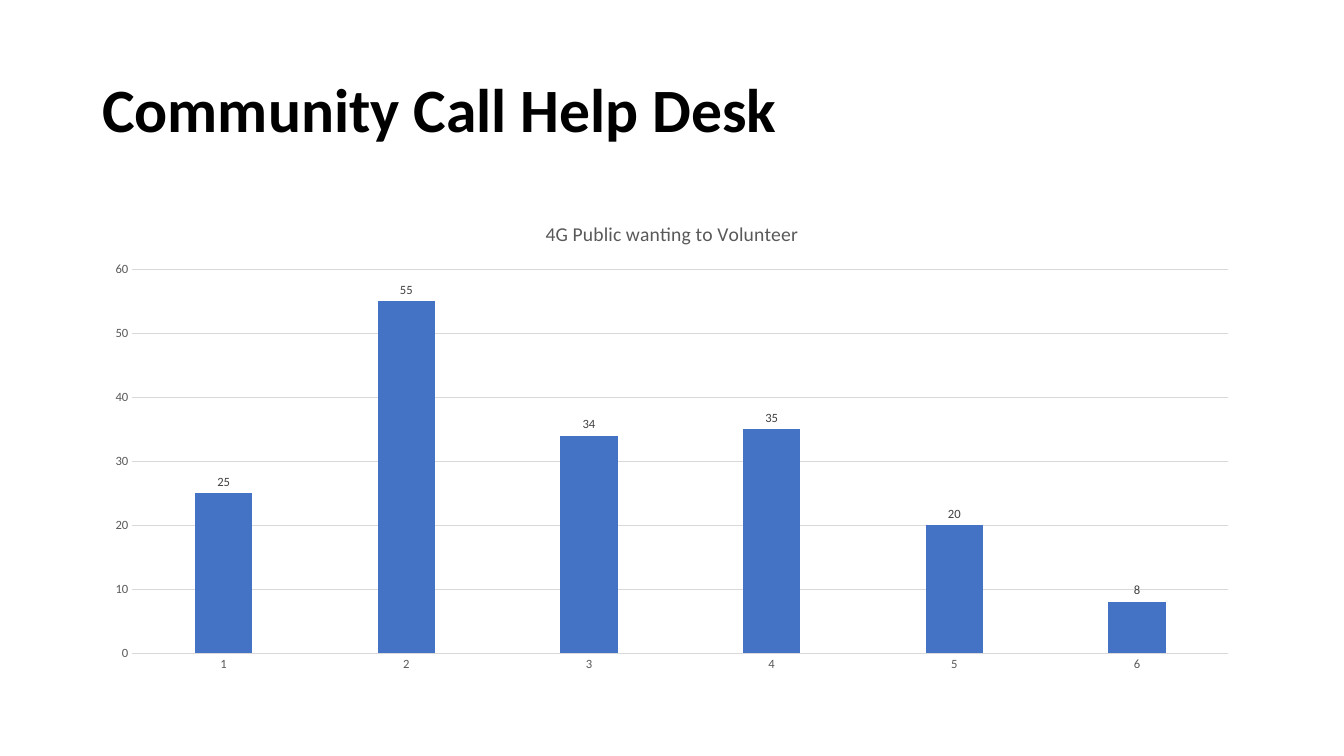
from pptx import Presentation
from pptx.chart.data import CategoryChartData
from pptx.dml.color import RGBColor
from pptx.enum.chart import XL_CHART_TYPE as ChartType, XL_LABEL_POSITION as LabelPosition, XL_TICK_MARK as TickMark
from pptx.enum.text import MSO_ANCHOR as Anchor
from pptx.util import Pt

EMU_PER_PX = 9525
BLACK = RGBColor(0x00, 0x00, 0x00)
DARK_GRAY = RGBColor(0x40, 0x40, 0x40)
GRAY = RGBColor(0x59, 0x59, 0x59)
LIGHT_GRAY = RGBColor(0xD9, 0xD9, 0xD9)
BLUE = RGBColor(0x44, 0x72, 0xC4)


def px(*lengths):
    return [length * EMU_PER_PX for length in lengths]


def set_attributes(target, values):
    for name, value in values.items():
        setattr(target, name, value)


class SlideBuilder:
    font_name = "Calibri"
    line_width = Pt(0.75)

    def __init__(self, slide):
        self.slide = slide

    def style_font(self, font, size, color, bold=False):
        set_attributes(font, {"name": self.font_name, "size": Pt(size), "bold": bold})
        font.color.rgb = color

    def style_line(self, line, color):
        line.width = self.line_width
        line.color.rgb = color

    def add_title(self, text, box):
        frame = self.slide.shapes.add_textbox(*px(*box)).text_frame
        set_attributes(frame, {"word_wrap": True, "vertical_anchor": Anchor.MIDDLE})
        paragraph = frame.paragraphs[0]
        set_attributes(paragraph, {"text": text, "line_spacing": 0.9})
        self.style_font(paragraph.runs[0].font, 44, BLACK, bold=True)

    def style_axis(self, axis):
        set_attributes(axis, {"major_tick_mark": TickMark.NONE, "minor_tick_mark": TickMark.NONE})
        self.style_font(axis.tick_labels.font, 9, GRAY)

    def add_column_chart(self, title, values, box):
        data = CategoryChartData()
        data.categories = [str(number) for number in range(1, len(values) + 1)]
        data.add_series(title, values)
        chart = self.slide.shapes.add_chart(ChartType.COLUMN_CLUSTERED, *px(*box), data).chart
        self.style_font(chart.font, 10, BLACK)
        set_attributes(chart, {"has_legend": False, "has_title": True})
        heading = chart.chart_title
        heading.include_in_layout = False
        paragraph = heading.text_frame.paragraphs[0]
        paragraph.text = title
        self.style_font(paragraph.runs[0].font, 14, GRAY)

        self.style_axis(chart.category_axis)
        self.style_line(chart.category_axis.format.line, LIGHT_GRAY)
        self.style_axis(chart.value_axis)
        chart.value_axis.format.line.fill.background()
        self.style_line(chart.value_axis.major_gridlines.format.line, LIGHT_GRAY)

        plot = chart.plots[0]
        set_attributes(plot, {"gap_width": 219, "overlap": -27, "vary_by_categories": False})
        series = plot.series[0]
        series.format.fill.solid()
        series.format.fill.fore_color.rgb = BLUE
        labels = series.data_labels
        set_attributes(labels, {"show_value": True, "position": LabelPosition.OUTSIDE_END})
        self.style_font(labels.font, 9, DARK_GRAY)


def main():
    presentation = Presentation()
    width, height = px(1280, 720)
    set_attributes(presentation, {"slide_width": width, "slide_height": height})
    builder = SlideBuilder(presentation.slides.add_slide(presentation.slide_layouts[6]))
    builder.add_title("Community Call Help Desk", (88, 38, 1104, 139))
    builder.add_column_chart("4G Public wanting to Volunteer", (25, 55, 34, 35, 20, 8), (88, 192, 1104, 457))
    presentation.save("out.pptx")


if __name__ == "__main__":
    main()
